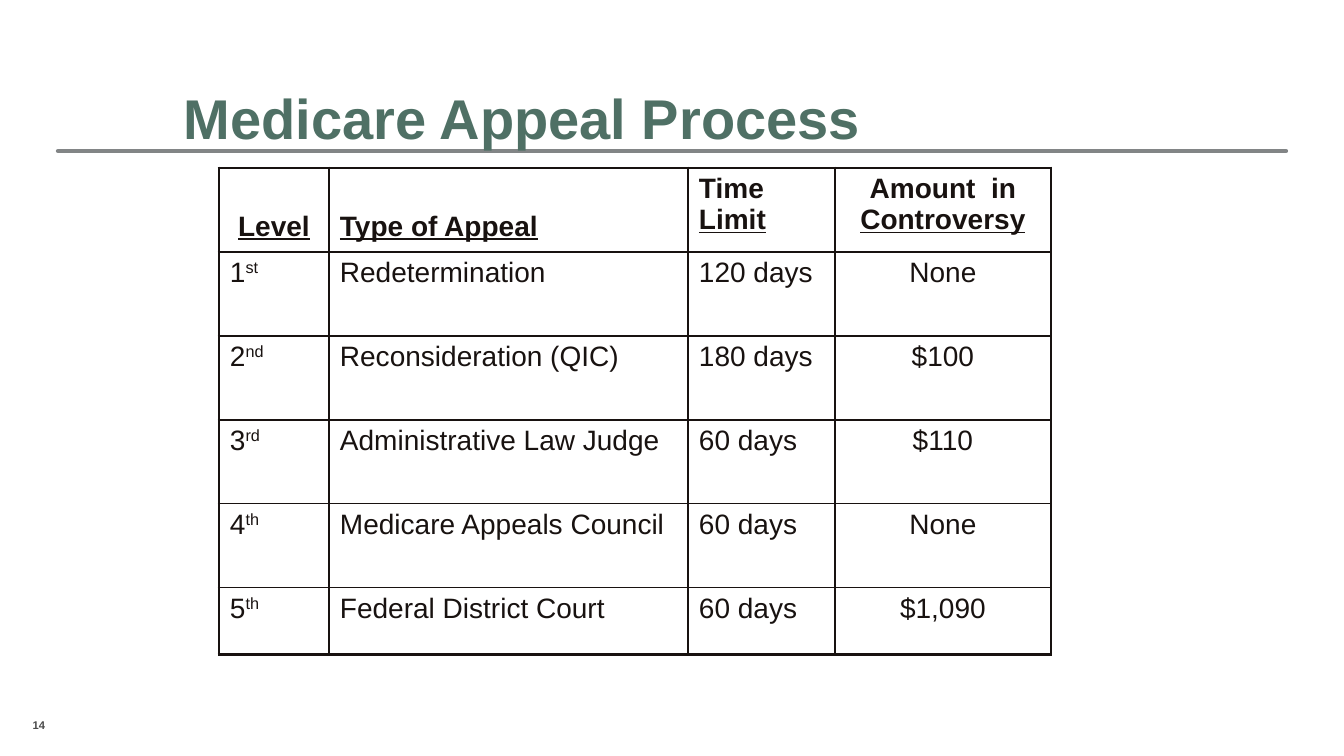
import lxml.etree
import pptx
import pptx.dml.color
import pptx.enum.shapes
import pptx.enum.text
import pptx.oxml.ns
import pptx.util

INK = pptx.dml.color.RGBColor(0x18, 0x12, 0x10)
GREEN = pptx.dml.color.RGBColor(0x4F, 0x70, 0x65)
RULE_GREY = pptx.dml.color.RGBColor(0x82, 0x85, 0x86)
NUMBER_GREY = pptx.dml.color.RGBColor(0x4B, 0x4B, 0x4B)

LEFT = pptx.enum.text.PP_ALIGN.LEFT
CENTER = pptx.enum.text.PP_ALIGN.CENTER
TOP = pptx.enum.text.MSO_ANCHOR.TOP
BOTTOM = pptx.enum.text.MSO_ANCHOR.BOTTOM

COLUMN_WIDTHS = [110, 359, 147, 216]
ROW_HEIGHTS = [84] * 5 + [67]
# Each header cell: runs as (text, underlined), alignment, anchor
HEADERS = [
    ([("Level", True)], CENTER, BOTTOM),
    ([("Type of Appeal", True)], LEFT, BOTTOM),
    ([("Time ", False), ("Limit", True)], LEFT, TOP),
    ([("Amount  in ", False), ("Controversy", True)], CENTER, TOP),
]
APPEALS = [
    ("1st", "Redetermination", "120 days", "None"),
    ("2nd", "Reconsideration (QIC)", "180 days", "$100"),
    ("3rd", "Administrative Law Judge", "60 days", "$110"),
    ("4th", "Medicare Appeals Council", "60 days", "None"),
    ("5th", "Federal District Court", "60 days", "$1,090"),
]


def px(length):
    return pptx.util.Emu(round(length * 914400 / 100.8))


def set_attributes(target, values):
    for name, value in values.items():
        setattr(target, name, value)


def add_element(parent, tag, **attributes):
    return lxml.etree.SubElement(parent, pptx.oxml.ns.qn(tag), attributes)


class SlideBuilder:
    font_name = "Arial"
    table_size = 20
    inner_line = 1
    outer_line = 2.25

    def __init__(self, deck):
        self.page = deck.slides.add_slide(deck.slide_layouts[6])

    def add_span(self, para, text, size, color, **style):
        span = para.add_run()
        span.text = text
        set_attributes(span.font, {"name": self.font_name, "size": pptx.util.Pt(size), **style})
        span.font.color.rgb = color
        return span

    def add_text(self, text, area, size, color, align=LEFT, anchor=TOP):
        box = self.page.shapes.add_textbox(*map(px, area))
        set_attributes(box.text_frame, {
            "word_wrap": True, "vertical_anchor": anchor, "margin_left": 0,
            "margin_right": 0, "margin_top": 0, "margin_bottom": 0,
        })
        para = box.text_frame.paragraphs[0]
        para.alignment = align
        self.add_span(para, text, size, color, bold=True)

    def add_rule(self, left, right, y):
        rule = self.page.shapes.add_connector(
            pptx.enum.shapes.MSO_CONNECTOR.STRAIGHT, px(left), px(y), px(right), px(y))
        rule.line.color.rgb = RULE_GREY
        rule.line.width = pptx.util.Pt(3)
        rule.line._ln.set("cap", "rnd")
        add_element(rule._element.spPr, "a:effectLst")

    def add_table(self, left, top, widths, heights):
        frame = self.page.shapes.add_table(
            len(heights), len(widths), px(left), px(top), px(sum(widths)), px(sum(heights)))
        table = frame.table
        set_attributes(table, {"first_row": False, "horz_banding": False})
        for column, width in zip(table.columns, widths):
            column.width = px(width)
        for row, height in zip(table.rows, heights):
            row.height = px(height)
        last_row, last_column = len(heights) - 1, len(widths) - 1
        for r in range(len(heights)):
            for c in range(len(widths)):
                outer = {"L": c == 0, "R": c == last_column, "T": r == 0, "B": r == last_row}
                self.style_cell(table.cell(r, c), outer)
        return table

    def style_cell(self, cell, outer):
        """Set margins, borders (heavier where outer is true) and no fill."""
        set_attributes(cell, {
            "margin_left": px(11), "margin_right": px(11),
            "margin_top": px(5), "margin_bottom": px(5),
        })
        properties = cell._tc.get_or_add_tcPr()
        for side, is_outer in outer.items():
            width = pptx.util.Pt(self.outer_line if is_outer else self.inner_line)
            border = add_element(properties, f"a:ln{side}", w=str(int(width)))
            add_element(add_element(border, "a:solidFill"), "a:srgbClr", val=str(INK))
        cell.fill.background()

    def fill_header(self, cell, runs, align, anchor):
        cell.vertical_anchor = anchor
        if anchor == BOTTOM:
            cell.margin_bottom = px(10)
        para = cell.text_frame.paragraphs[0]
        para.alignment = align
        for text, underline in runs:
            self.add_span(para, text, self.table_size, INK, bold=True, underline=underline)

    def fill_cell(self, cell, text, align=LEFT, raised=""):
        para = cell.text_frame.paragraphs[0]
        para.alignment = align
        self.add_span(para, text, self.table_size, INK)
        if raised:
            span = self.add_span(para, raised, self.table_size, INK)
            span._r.get_or_add_rPr().set("baseline", "30000")


def main():
    deck = pptx.Presentation()
    set_attributes(deck, {"slide_width": px(1344), "slide_height": px(756)})
    builder = SlideBuilder(deck)
    builder.add_rule(58, 1286, 151)
    builder.add_text("14", (5, 718, 68, 13), 8, NUMBER_GREY, CENTER)
    builder.add_text("Medicare Appeal Process", (184, 25, 891, 126), 40, GREEN, anchor=BOTTOM)

    table = builder.add_table(219, 168, COLUMN_WIDTHS, ROW_HEIGHTS)
    for column, header in enumerate(HEADERS):
        builder.fill_header(table.cell(0, column), *header)
    for row, (level, appeal, limit, amount) in enumerate(APPEALS, start=1):
        builder.fill_cell(table.cell(row, 0), level[0], raised=level[1:])
        builder.fill_cell(table.cell(row, 1), appeal)
        builder.fill_cell(table.cell(row, 2), limit)
        builder.fill_cell(table.cell(row, 3), amount, CENTER)
    deck.save("out.pptx")


if __name__ == "__main__":
    main()
